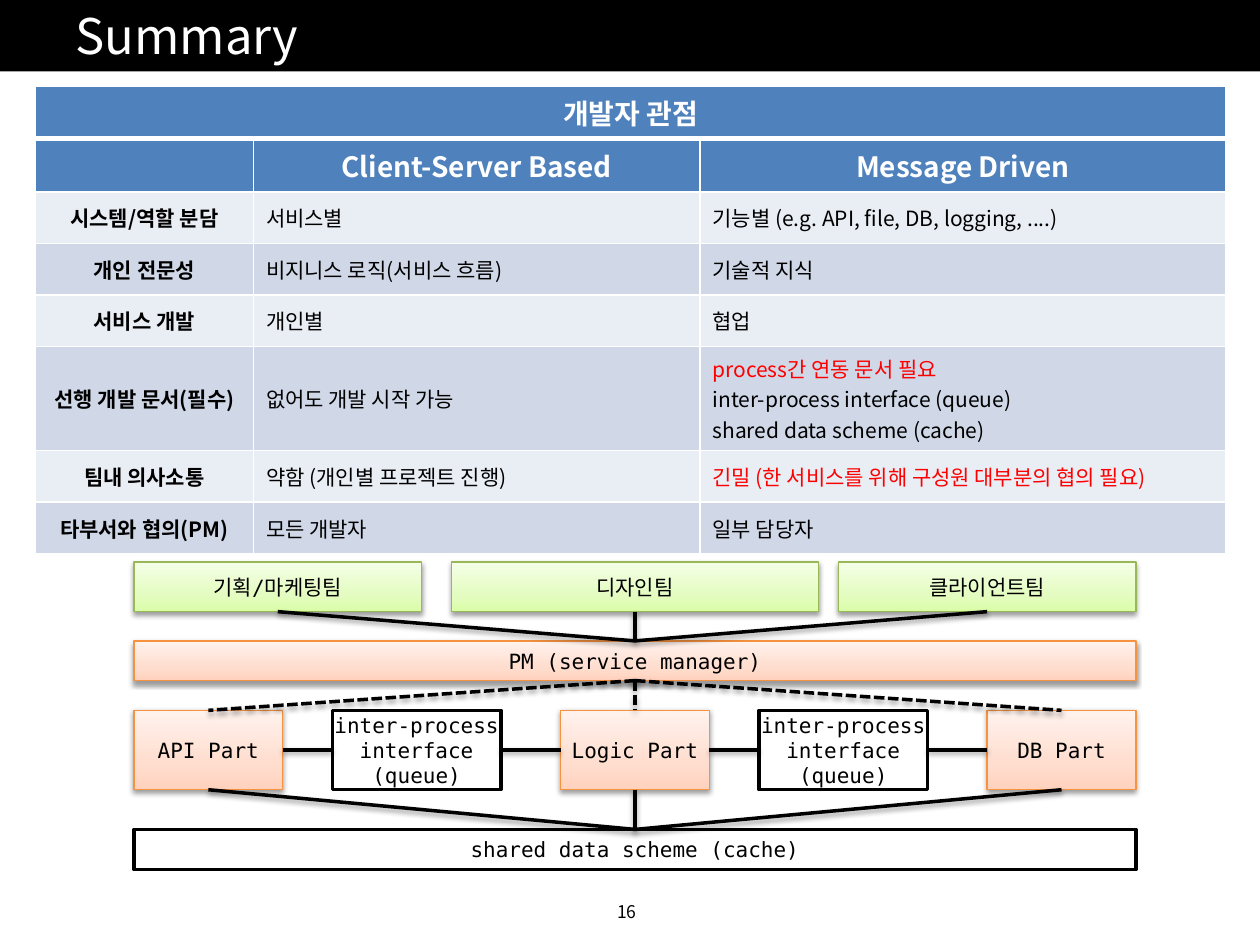
from dataclasses import dataclass

from lxml.etree import SubElement
from pptx import Presentation
from pptx.dml.color import RGBColor
from pptx.enum.dml import MSO_LINE
from pptx.enum.shapes import MSO_CONNECTOR, MSO_SHAPE
from pptx.enum.text import MSO_ANCHOR, PP_ALIGN
from pptx.oxml import parse_xml
from pptx.oxml.ns import nsdecls, qn
from pptx.util import Cm, Pt

SANS, MONO = "Noto Sans CJK KR", "DejaVu Sans Mono"
BLACK, WHITE, RED = "000000", "FFFFFF", "FF0000"
HEADER, BANDS = "4F81BD", ("E9EDF4", "D0D8E8")
TOP, LEFT, BOTTOM, RIGHT = range(4)  # connection sites of a rectangle
SHADOW = (
    f'<a:effectLst {nsdecls("a")}><a:outerShdw blurRad="39400" dist="20300" dir="5400000" '
    'rotWithShape="0"><a:srgbClr val="000000"><a:alpha val="38000"/></a:srgbClr>'
    "</a:outerShdw></a:effectLst>"
)


@dataclass(frozen=True)
class BoxStyle:
    stops: tuple[str, ...]  # colours from bottom to top; one means solid
    line: str
    line_width: float


@dataclass(frozen=True)
class Box:
    text: str
    left: float
    top: float
    width: float
    height: float
    style: BoxStyle


@dataclass(frozen=True)
class Link:
    start: str
    start_site: int
    end: str
    end_site: int
    dashed: bool = False


def rgb(value: str) -> RGBColor:
    return RGBColor.from_string(value)


def write(frame, text: str, size: float, font: str = SANS, color: str = BLACK,
          bold: bool = False, align=PP_ALIGN.LEFT, first_color: str = "") -> None:
    """Write one paragraph per line; first_color applies to the first line only."""
    for index, line in enumerate(text.split("\n")):
        paragraph = frame.paragraphs[0] if index == 0 else frame.add_paragraph()
        paragraph.alignment = align
        run = paragraph.add_run()
        run.text = line
        for name, value in {"size": Pt(size), "name": font, "bold": bold}.items():
            setattr(run.font, name, value)
        run.font.color.rgb = rgb(first_color if first_color and index == 0 else color)
        SubElement(run._r.get_or_add_rPr(), qn("a:ea")).set("typeface", font)


def draw_box(slide, box: Box):
    shape = slide.shapes.add_shape(
        MSO_SHAPE.RECTANGLE, *map(Cm, (box.left, box.top, box.width, box.height)))
    stops = box.style.stops
    shape.line.color.rgb = rgb(box.style.line)
    shape.line.width = Pt(box.style.line_width)
    shape.shadow.inherit = False
    if len(stops) == 1:
        shape.fill.solid()
        shape.fill.fore_color.rgb = rgb(stops[0])
    else:
        marks = "".join(f'<a:gs pos="{pos}"><a:srgbClr val="{color}"/></a:gs>'
                        for pos, color in zip((0, 35000, 100000), stops))
        properties = shape._element.spPr
        properties.find(qn("a:prstGeom")).addnext(parse_xml(
            f'<a:gradFill {nsdecls("a")} rotWithShape="1"><a:gsLst>{marks}</a:gsLst>'
            '<a:lin ang="16200000" scaled="0"/></a:gradFill>'))
        properties.replace(properties.find(qn("a:effectLst")), parse_xml(SHADOW))
    frame = shape.text_frame
    frame.word_wrap = False
    frame.vertical_anchor = MSO_ANCHOR.MIDDLE
    write(frame, box.text, 12, MONO, align=PP_ALIGN.CENTER)
    return shape


def draw_link(slide, shapes: dict, link: Link) -> None:
    line = slide.shapes.add_connector(MSO_CONNECTOR.STRAIGHT, 0, 0, 0, 0)
    line.begin_connect(shapes[link.start], link.start_site)
    line.end_connect(shapes[link.end], link.end_site)
    line.line.color.rgb = rgb(BLACK)
    line.line.width = Pt(2)
    if link.dashed:
        line.line.dash_style = MSO_LINE.SQUARE_DOT
    line._element.spPr.append(parse_xml(SHADOW))


def format_cell(cell, fill: str, bottom_width: float = 1, top_width: float = 1) -> None:
    widths = {"lnL": 1, "lnR": 1, "lnT": top_width, "lnB": bottom_width}
    properties = cell._tc.get_or_add_tcPr()
    for side, width in widths.items():
        properties.append(parse_xml(
            f'<a:{side} {nsdecls("a")} w="{Pt(width)}"><a:solidFill>'
            f'<a:srgbClr val="{WHITE}"/></a:solidFill></a:{side}>'))
    cell.fill.solid()
    cell.fill.fore_color.rgb = rgb(fill)


def draw_comparison(slide, rows: list, red_cells: set) -> None:
    table = slide.shapes.add_table(len(rows), 3, Cm(0.71), Cm(1.73), Cm(24), Cm(8.99)).table
    for column, width in zip(table.columns, (4.4, 9, 10.6)):
        column.width = Cm(width)
    for r, row in enumerate(rows):
        table.rows[r].height = Cm(1.65 if r == 5 else 1.04)
        is_header = r < 2
        for c, text in enumerate(row):
            cell = table.cell(r, c)
            format_cell(cell, HEADER if is_header else BANDS[r % 2],
                        3 if r == 0 else 1, 3 if r == 1 else 1)
            cell.vertical_anchor = MSO_ANCHOR.TOP if is_header else MSO_ANCHOR.MIDDLE
            centred = is_header or c == 0
            write(cell.text_frame, text, 16 if is_header else 12,
                  color=WHITE if is_header else BLACK, bold=centred,
                  align=PP_ALIGN.CENTER if centred else PP_ALIGN.LEFT,
                  first_color=RED if (r, c) in red_cells else "")
    table.cell(0, 0).merge(table.cell(0, 2))


COMPARISON = [
    ("개발자 관점", "", ""),
    ("", "Client-Server Based", "Message Driven"),
    ("시스템/역할 분담", "서비스별", "기능별 (e.g. API, file, DB, logging, ....)"),
    ("개인 전문성", "비지니스 로직(서비스 흐름)", "기술적 지식"),
    ("서비스 개발", "개인별", "협업"),
    ("선행 개발 문서(필수)", "없어도 개발 시작 가능",
     "process간 연동 문서 필요\ninter-process interface (queue)\nshared data scheme (cache)"),
    ("팀내 의사소통", "약함 (개인별 프로젝트 진행)",
     "긴밀 (한 서비스를 위해 구성원 대부분의 협의 필요)"),
    ("타부서와 협의(PM)", "모든 개발자", "일부 담당자"),
]

TEAM = BoxStyle(("DAFDA7", "E4FCC2", "F5FFE7"), "98B955", 0.75)
PART = BoxStyle(("FFD2BD", "FFDED0", "FFF2ED"), "F69240", 0.75)
SHARED = BoxStyle((WHITE,), BLACK, 2)
QUEUE = "inter-process\ninterface\n(queue)"
TEAM_ROW, PART_ROW = (11.33, 1), (14.32, 1.6)  # top and height


def row_box(text: str, left: float, width: float, row: tuple, style: BoxStyle) -> Box:
    return Box(text, left, row[0], width, row[1], style)


BOXES = {
    "planning": row_box("기획/마케팅팀", 2.7, 5.8, TEAM_ROW, TEAM),
    "design": row_box("디자인팀", 9.1, 7.4, TEAM_ROW, TEAM),
    "client": row_box("클라이언트팀", 16.9, 6, TEAM_ROW, TEAM),
    "pm": Box("PM (service manager)", 2.7, 12.92, 20.2, 0.8, PART),
    "api": row_box("API Part", 2.7, 3, PART_ROW, PART),
    "api_queue": row_box(QUEUE, 6.7, 3.4, PART_ROW, SHARED),
    "logic": row_box("Logic Part", 11.3, 3, PART_ROW, PART),
    "db_queue": row_box(QUEUE, 15.3, 3.4, PART_ROW, SHARED),
    "db": row_box("DB Part", 19.9, 3, PART_ROW, PART),
    "cache": Box("shared data scheme (cache)", 2.7, 16.72, 20.2, 0.81, SHARED),
}
PARTS = ("api", "logic", "db")
CHAIN = ("api", "api_queue", "logic", "db_queue", "db")
LINKS = [
    *(Link(team, BOTTOM, "pm", TOP) for team in ("planning", "design", "client")),
    *(Link("pm", BOTTOM, part, TOP, dashed=True) for part in PARTS),
    *(Link(a, RIGHT, b, LEFT) for a, b in zip(CHAIN, CHAIN[1:])),
    *(Link(part, BOTTOM, "cache", TOP) for part in PARTS),
]


def main() -> None:
    presentation = Presentation()
    presentation.slide_width, presentation.slide_height = Cm(25.4), Cm(19.05)
    slide = presentation.slides.add_slide(presentation.slide_layouts[5])

    # Title on a black band, which lies behind it
    band = slide.shapes.add_shape(MSO_SHAPE.RECTANGLE, 0, Cm(-0.08), Cm(25.4), Cm(1.52))
    band.fill.solid()
    band.fill.fore_color.rgb = rgb(BLACK)
    band.line.fill.background()
    band.shadow.inherit = False
    slide.shapes._spTree.insert(2, band._element)
    title = slide.shapes.title
    place = {"left": 1.27, "top": -0.08, "width": 23.83, "height": 1.57}
    for name, value in place.items():
        setattr(title, name, Cm(value))
    title.text_frame.vertical_anchor = MSO_ANCHOR.MIDDLE
    write(title.text_frame, "Summary", 28, color=WHITE)

    # Comparison table and team structure
    draw_comparison(slide, COMPARISON, {(5, 2), (6, 2)})
    shapes = {key: draw_box(slide, box) for key, box in BOXES.items()}
    for link in LINKS:
        draw_link(slide, shapes, link)

    # Page number
    page = slide.shapes.add_textbox(Cm(12.19), Cm(18.03), Cm(1.04), Cm(0.69))
    page.text_frame.word_wrap = False
    write(page.text_frame, "16", 10)

    presentation.save("out.pptx")


if __name__ == "__main__":
    main()
